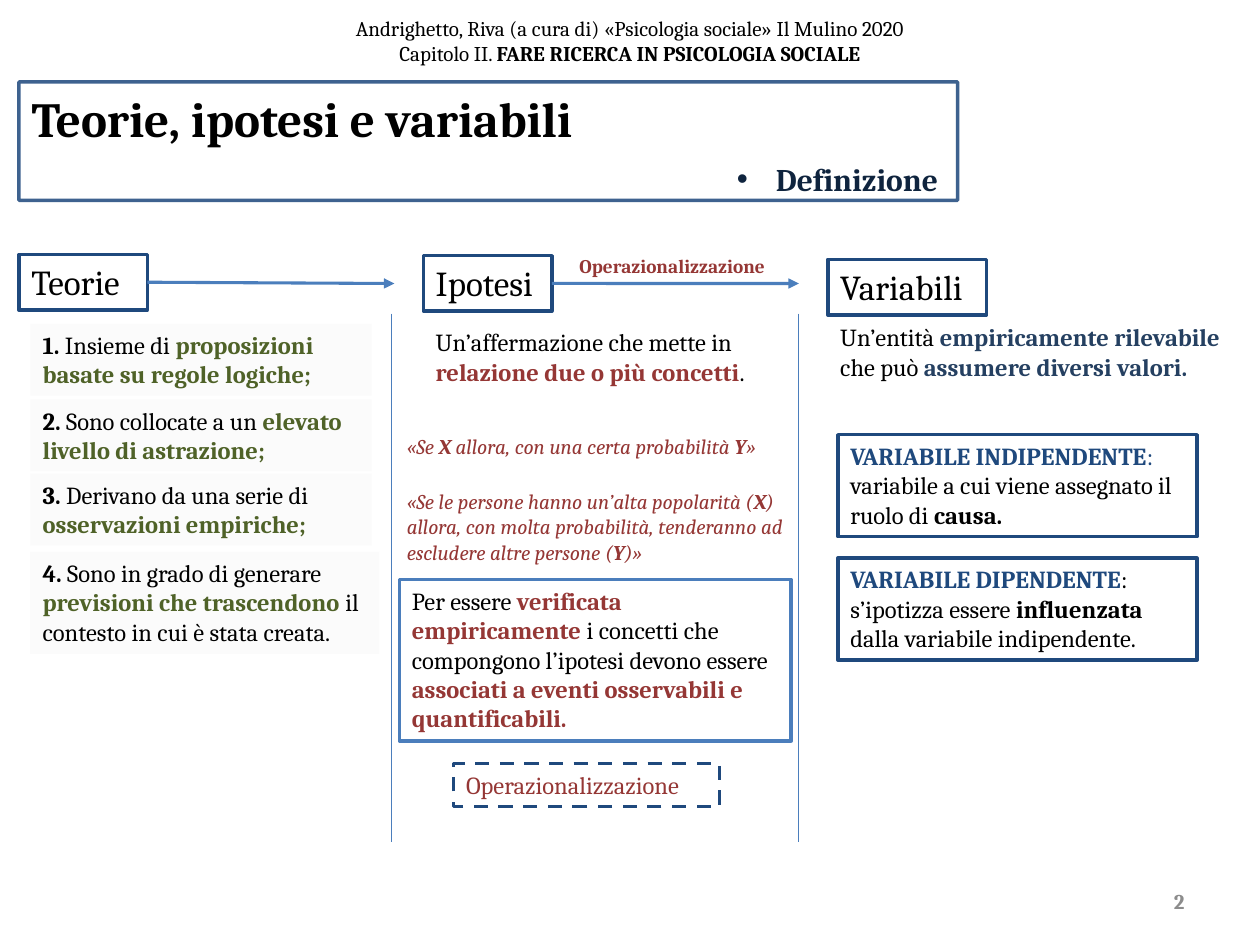
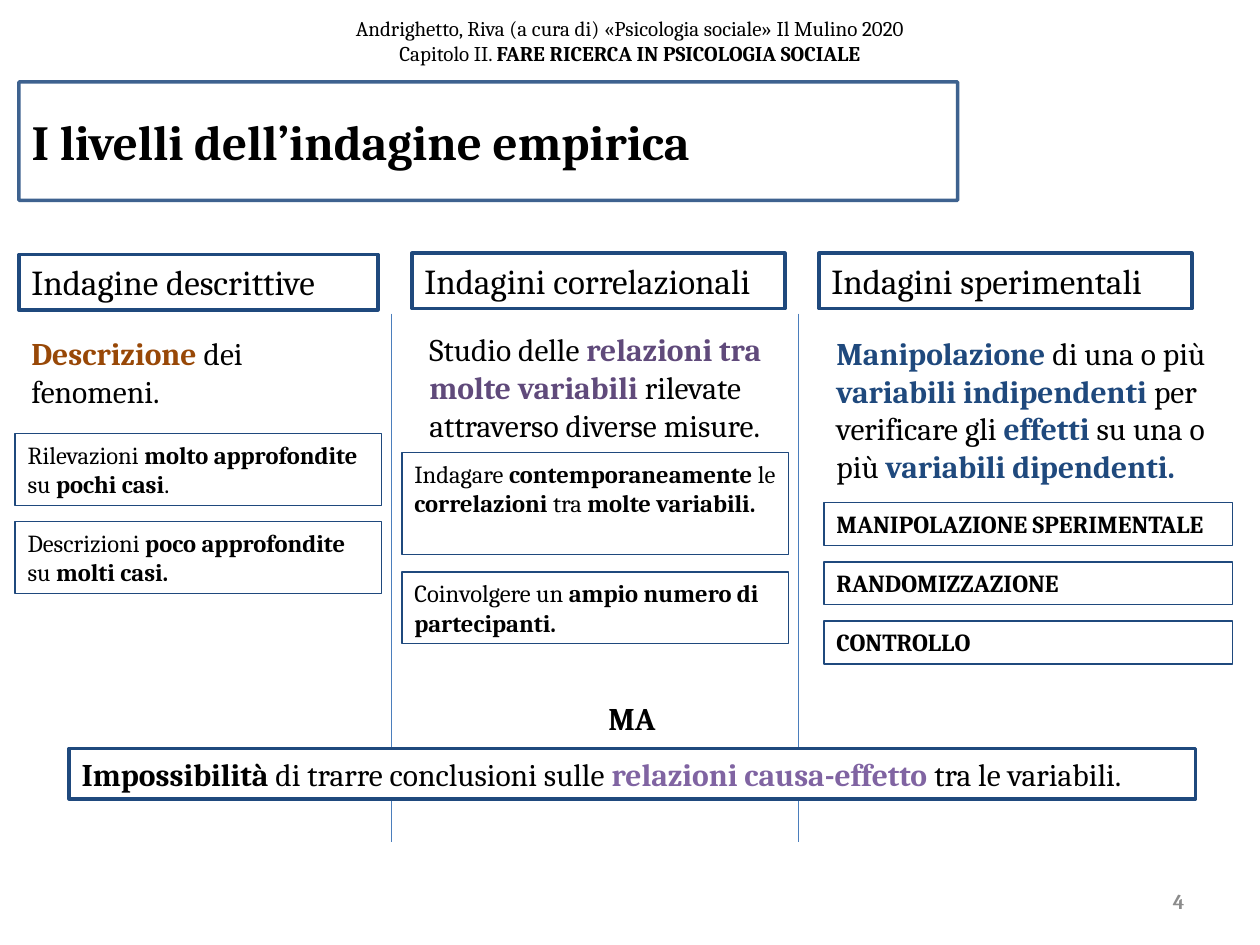
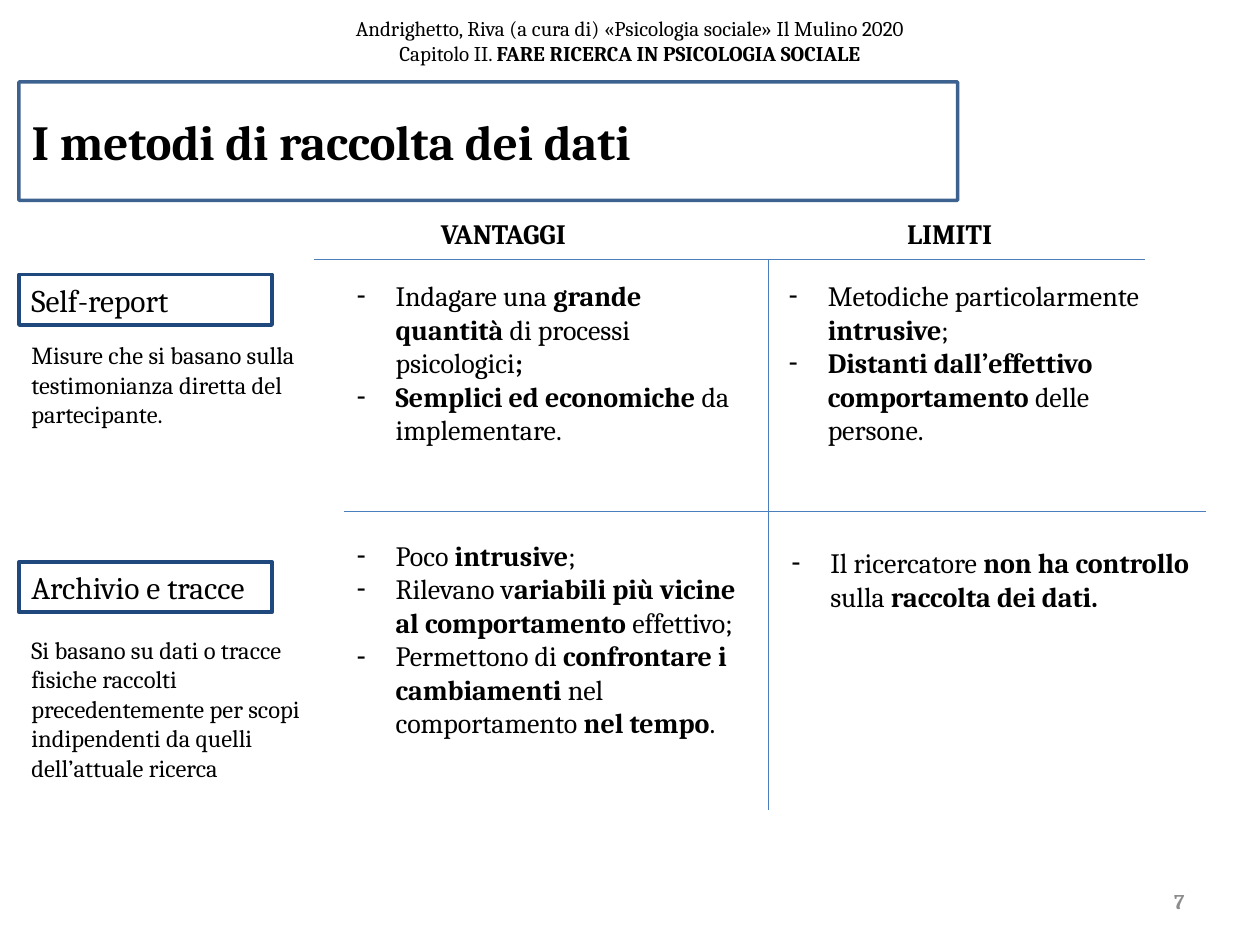
from dataclasses import dataclass

from lxml import etree
from pptx import Presentation
from pptx.dml.color import RGBColor
from pptx.enum.dml import MSO_LINE
from pptx.enum.shapes import MSO_CONNECTOR, MSO_SHAPE
from pptx.enum.text import MSO_ANCHOR, MSO_AUTO_SIZE, PP_ALIGN
from pptx.oxml.ns import qn
from pptx.util import Inches, Pt

RECTANGLE, STRAIGHT, DASH = MSO_SHAPE.RECTANGLE, MSO_CONNECTOR.STRAIGHT, MSO_LINE.DASH
LEFT, CENTER, RIGHT = PP_ALIGN.LEFT, PP_ALIGN.CENTER, PP_ALIGN.RIGHT
TOP, MIDDLE = MSO_ANCHOR.TOP, MSO_ANCHOR.MIDDLE
NO_AUTOFIT = MSO_AUTO_SIZE.NONE
TITLE_ONLY, COMPARISON = 5, 4
RIGHT_SIDE = 3


@dataclass(frozen=True)
class Theme:
    font: str = "Cambria"
    black: str = "000000"
    white: str = "FFFFFF"
    mist: str = "F2F2F2"
    gray: str = "8C8C8C"
    navy: str = "1F497D"
    blue: str = "4B7EBC"
    ink: str = "0F243E"
    steel: str = "254061"
    green: str = "4F6228"
    red: str = "953735"
    brown: str = "984807"
    purple: str = "604A7B"
    lilac: str = "8064A2"
    title: int = 28
    heading: int = 20
    lead: int = 18
    listing: int = 16
    body: int = 14
    small: int = 12
    label: int = 11
    bold_line: float = 2
    arrow_line: float = 1.75
    thin_line: float = 0.75


THEME = Theme()


def add_box(page, place, texts, size=THEME.body, accent=THEME.black, edge=None,
            weight=THEME.bold_line, fill=None, opacity=None, holder=None,
            align=LEFT, anchor=TOP, italic=False, bullet=None, spacing=None):
    """Place a box with one paragraph per text.

    Spans are split by "|"; a leading "*" means bold, "^" bold in the accent
    colour and "~" regular in the accent colour.
    """
    area = [Inches(length) for length in place]
    if holder is not None:
        box = holder
        box.left, box.top, box.width, box.height = area
    elif edge or fill:
        box = page.shapes.add_shape(RECTANGLE, *area)
        box.shadow.inherit = False
    else:
        box = page.shapes.add_textbox(*area)

    if fill:
        box.fill.solid()
        box.fill.fore_color.rgb = RGBColor.from_string(fill)
    else:
        box.fill.background()
    if edge:
        box.line.color.rgb = RGBColor.from_string(edge)
        box.line.width = Pt(weight)
    else:
        box.line.fill.background()
    if opacity:
        for color in box.element.spPr.iter(qn("a:srgbClr")):
            etree.SubElement(color, qn("a:alpha"), val=str(opacity * 1000))

    frame = box.text_frame
    frame.word_wrap = True
    frame.auto_size = NO_AUTOFIT
    frame.vertical_anchor = anchor
    for index, text in enumerate(texts):
        para = frame.add_paragraph() if index else frame.paragraphs[0]
        if bullet:
            properties = para._p.get_or_add_pPr()
            properties.set("marL", str(Inches(0.31)))
            properties.set("indent", str(Inches(-0.31)))
            etree.SubElement(properties, qn("a:buFont"), typeface="Arial")
            etree.SubElement(properties, qn("a:buChar"), char=bullet)
        para.alignment = align
        para.space_before = Pt(0)
        if spacing:
            para.line_spacing = spacing
        for part in text.split("|"):
            mark = part[0] if part[0] in "*^~" else ""
            span = para.add_run()
            span.text = part[len(mark):]
            span.font.name = THEME.font
            span.font.size = Pt(size)
            span.font.bold = mark in ("*", "^")
            span.font.italic = italic
            span.font.color.rgb = RGBColor.from_string(accent if mark in ("^", "~") else THEME.black)
    return box


def add_line(page, start, end, weight=THEME.thin_line):
    line = page.shapes.add_connector(STRAIGHT, *[Inches(length) for length in (*start, *end)])
    line.line.color.rgb = RGBColor.from_string(THEME.blue)
    line.line.width = Pt(weight)
    etree.SubElement(line.element.spPr, qn("a:effectLst"))
    return line


deck = Presentation()
deck.slide_width, deck.slide_height = Inches(10), Inches(7.5)

# Title frame and page number
pages = []
for title, number, layout, anchor in (
    ("Teorie, ipotesi e variabili", 2, TITLE_ONLY, TOP),
    ("I livelli dell’indagine empirica", 4, TITLE_ONLY, MIDDLE),
    ("I metodi di raccolta dei dati", 7, COMPARISON, MIDDLE),
):
    page = deck.slides.add_slide(deck.slide_layouts[layout])
    add_box(page, (0.15, 0.65, 7.45, 0.94), ["*" + title], THEME.title, edge=THEME.navy,
            opacity=86, holder=page.shapes.title, anchor=anchor)
    add_box(page, (7.17, 6.95, 2.33, 0.4), [f"^{number}"], THEME.small, THEME.gray,
            align=RIGHT, anchor=MIDDLE)
    pages.append(page)
theory, levels, methods = pages

# Column dividers
for page in (theory, levels):
    for x in (3.11, 6.34):
        add_line(page, (x, 2.49), (x, 6.68))

# Theories, hypotheses and variables
headings = [
    add_box(theory, (left, top, width, 0.44), [text], THEME.heading,
            edge=THEME.navy, fill=THEME.white)
    for left, top, width, text in (
        (0.15, 2.02, 1.02, "Teorie"),
        (3.36, 2.03, 1.02, "Ipotesi"),
        (6.57, 2.06, 1.26, "Variabili"),
    )
]
for heading, end in zip(headings, (3.13, 6.34)):
    arrow = add_line(theory, (end - 1.96, 2.24), (end, 2.25), THEME.arrow_line)
    arrow.begin_connect(heading, RIGHT_SIDE)
    etree.SubElement(arrow.line._get_or_add_ln(), qn("a:tailEnd"), type="triangle")

add_box(theory, (5.75, 1.07, 1.85, 0.5), ["^Definizione"], THEME.lead, THEME.ink,
        bullet="•", spacing=1.5)

for number, (top, width, height, text) in enumerate((
    (2.57, 2.71, 0.57, " Insieme di |^proposizioni basate su regole logiche;"),
    (3.17, 2.71, 0.57, " Sono collocate a un |^elevato livello di astrazione;"),
    (3.76, 2.71, 0.57, " Derivano da una serie di |^osservazioni empiriche;"),
    (4.38, 2.77, 0.81, " Sono in grado di generare |^previsioni che trascendono "
                       "|il contesto in cui è stata creata."),
), start=1):
    add_box(theory, (0.24, top, width, height), [f"*{number}.|{text}"],
            accent=THEME.green, fill=THEME.mist, opacity=30)

add_box(theory, (3.36, 2.55, 2.88, 0.57),
        ["Un’affermazione che mette in |^relazione due o più concetti|."], accent=THEME.red)
for top, height, text in (
    (3.39, 0.3, "~«Se |^X|~ allora, con una certa probabilità |^Y|~»"),
    (3.83, 0.71, "~«Se le persone hanno un’alta popolarità (|^X|~) allora, con molta "
                 "probabilità, tenderanno ad escludere altre persone (|^Y|~)»"),
):
    add_box(theory, (3.13, top, 3.21, height), [text], THEME.small, THEME.red, italic=True)
add_box(theory, (3.17, 4.6, 3.11, 1.28),
        ["Per essere |^verificata empiricamente |i concetti che compongono l’ipotesi devono "
         "essere |^associati a eventi osservabili e quantificabili."],
        accent=THEME.red, edge=THEME.blue)
operation = add_box(theory, (3.6, 6.06, 2.11, 0.34), ["~Operazionalizzazione"],
                    accent=THEME.red, edge=THEME.navy, fill=THEME.white)
operation.line.dash_style = DASH
add_box(theory, (4.5, 1.97, 1.79, 0.29), ["^Operazionalizzazione"], THEME.label, THEME.red)

add_box(theory, (6.57, 2.51, 3.35, 0.57),
        ["Un’entità |^empiricamente rilevabile| che può |^assumere diversi valori."],
        accent=THEME.steel)
for top, text in (
    (3.45, "^VARIABILE INDIPENDENTE|~: |variabile a cui viene assegnato il ruolo di |*causa."),
    (4.43, "^VARIABILE DIPENDENTE|: s’ipotizza essere |*influenzata"
           "| dalla variabile indipendente."),
):
    add_box(theory, (6.65, top, 2.85, 0.81), [text], accent=THEME.navy, edge=THEME.navy)

# Levels of empirical inquiry
for left, top, width, text in (
    (0.15, 2.02, 2.85, "Indagine descrittive"),
    (3.27, 2.01, 2.96, "Indagini correlazionali"),
    (6.5, 2.01, 2.96, "Indagini sperimentali"),
):
    add_box(levels, (left, top, width, 0.44), [text], THEME.heading,
            edge=THEME.navy, fill=THEME.white)

for place, accent, text in (
    ((0.15, 2.6, 2.88, 0.71), THEME.brown, "^Descrizione| dei fenomeni."),
    ((3.31, 2.57, 3.03, 1.01), THEME.purple,
     "Studio delle |^relazioni tra molte variabili |rilevate attraverso diverse misure."),
    ((6.54, 2.6, 3.24, 1.31), THEME.navy,
     "^Manipolazione| di una o più |^variabili indipendenti| per verificare gli "
     "|^effetti| su una o più |^variabili dipendenti."),
):
    add_box(levels, place, [text], THEME.lead, accent)

for left, width, features in (
    (0.12, 2.91, (
        (3.44, 0.57, "Rilevazioni |*molto approfondite| su |*pochi casi|."),
        (4.14, 0.57, "Descrizioni |*poco approfondite |su |*molti casi."),
    )),
    (3.19, 3.07, (
        (3.59, 0.81, "Indagare |*contemporaneamente| le |*correlazioni| tra "
                     "|*molte variabili."),
        (4.54, 0.57, "Coinvolgere un |*ampio numero di partecipanti."),
    )),
    (6.54, 3.24, (
        (3.99, 0.34, "*MANIPOLAZIONE SPERIMENTALE"),
        (4.46, 0.34, "*RANDOMIZZAZIONE"),
        (4.93, 0.34, "*CONTROLLO"),
    )),
):
    for top, height, text in features:
        add_box(levels, (left, top, width, height), [text],
                edge=THEME.navy, weight=THEME.thin_line)

add_box(levels, (4.73, 5.5, 0.65, 0.4), ["*MA"], THEME.lead)
add_box(levels, (0.55, 5.94, 8.94, 0.4),
        ["*Impossibilità| di trarre conclusioni sulle |^relazioni causa-effetto "
         "|tra le variabili."],
        THEME.lead, THEME.lilac, edge=THEME.navy, fill=THEME.white)

# Data collection methods
for start, end in (
    ((6.1, 2.06), (6.1, 6.43)),
    ((9.09, 2.06), (2.49, 2.06)),
    ((9.57, 4.06), (2.73, 4.06)),
):
    add_line(methods, start, end)
for left, text in ((3.4, "*VANTAGGI"), (7.1, "*LIMITI")):
    add_box(methods, (left, 1.67, 1.52, 0.37), [text], THEME.listing)

for top, name, text_top, height, text in (
    (2.18, "Self-report", 2.65, 0.81,
     "Misure che si basano sulla testimonianza diretta del partecipante."),
    (4.46, "Archivio e tracce", 4.99, 1.28,
     "Si basano su dati o tracce fisiche raccolti precedentemente per scopi indipendenti "
     "da quelli dell’attuale ricerca"),
):
    add_box(methods, (0.15, top, 2.01, 0.4), [name], THEME.lead,
            edge=THEME.navy, fill=THEME.white)
    add_box(methods, (0.15, text_top, 2.41, height), [text])

bodies = list(methods.placeholders)[1:]
for body, (place, points) in zip(bodies, (
    ((2.73, 2.16, 3.29, 1.45), (
        "Indagare una |*grande quantità| di processi psicologici|*;",
        "*Semplici ed economiche |da implementare.",
    )),
    ((6.16, 2.16, 3.09, 1.45), (
        "Metodiche particolarmente |*intrusive|;",
        "*Distanti dall’effettivo comportamento |delle persone.",
    )),
    ((2.73, 4.22, 3.29, 1.99), (
        "Poco |*intrusive|;",
        "Rilevano v|*ariabili più vicine al comportamento |effettivo;",
        "Permettono di |*confrontare i cambiamenti| nel comportamento |*nel tempo|.",
    )),
    ((6.18, 4.28, 3.46, 0.64), (
        "Il ricercatore |*non ha controllo| sulla |*raccolta dei dati.",
    )),
)):
    add_box(methods, place, points, THEME.listing, holder=body, bullet="-")

# Running header, moved to the master so that every slide shows it
header = add_box(methods, (0, 0, 10, 0.65),
                 ["Andrighetto, Riva (a cura di) «Psicologia sociale» Il Mulino 2020",
                  "Capitolo II. |*FARE RICERCA IN PSICOLOGIA SOCIALE"],
                 THEME.small, align=CENTER, anchor=MIDDLE)
deck.slide_master.shapes.element.append(header.element)

deck.save("out.pptx")
